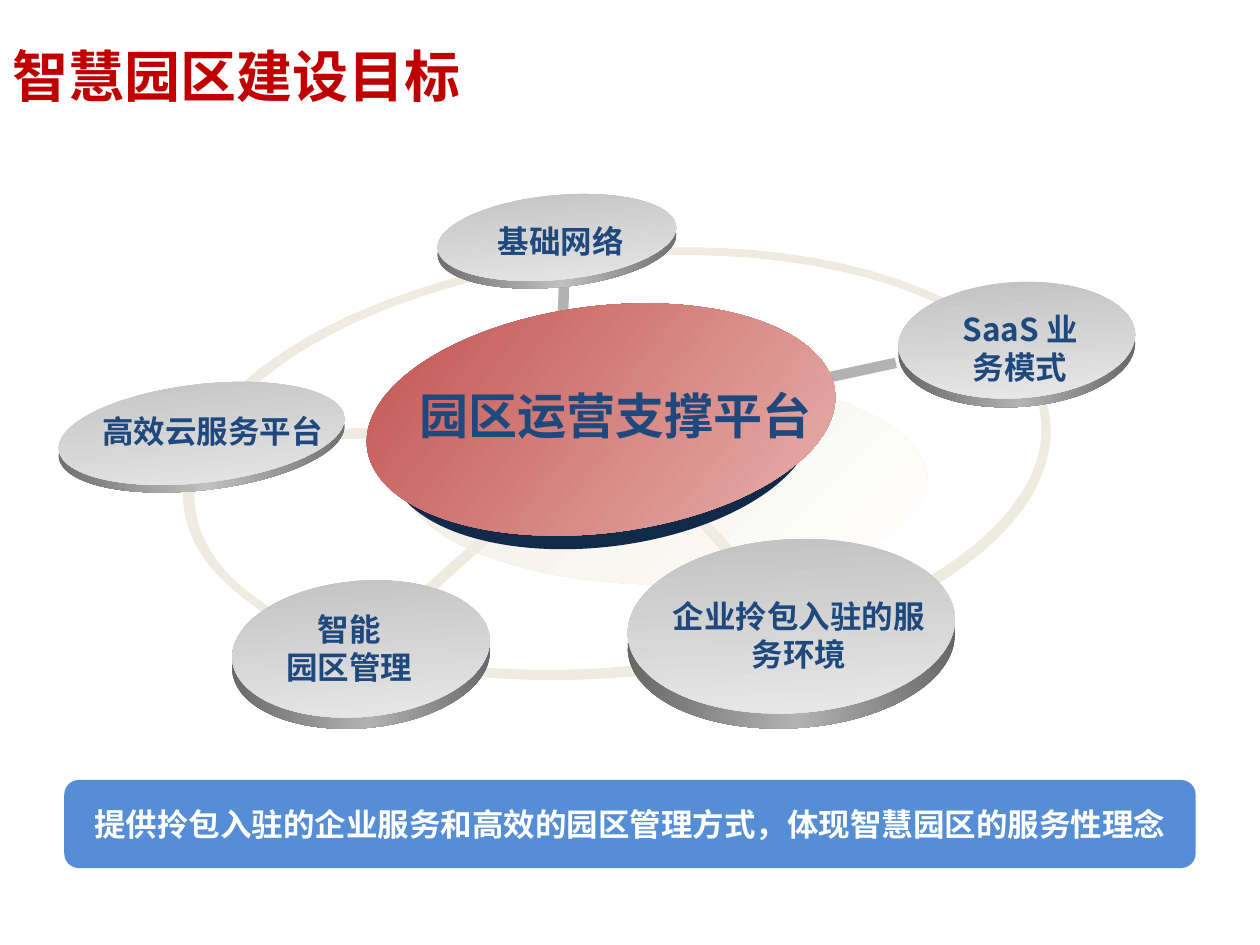
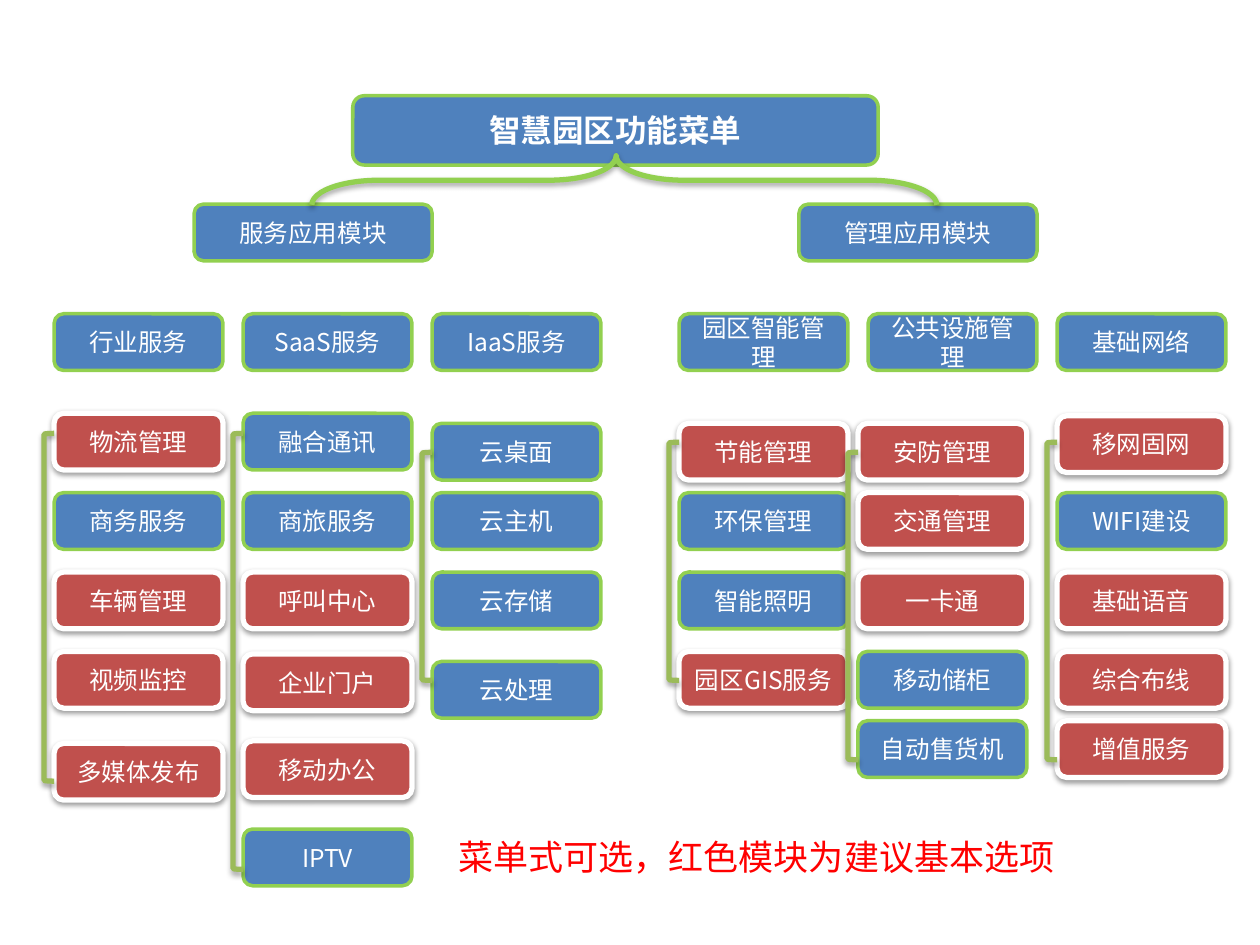
from lxml.etree import SubElement
from pptx import Presentation
from pptx.dml.color import RGBColor
from pptx.enum.shapes import MSO_CONNECTOR, MSO_SHAPE as Shape
from pptx.enum.text import MSO_ANCHOR as Anchor, PP_ALIGN as Align
from pptx.oxml.ns import qn
from pptx.util import Inches, Pt

FONT = "Noto Sans CJK SC"
WHITE = RGBColor(0xFF, 0xFF, 0xFF)
TITLE_RED = RGBColor(0xC0, 0x00, 0x00)
NOTE_RED = RGBColor(0xFF, 0x00, 0x00)
NAVY = RGBColor(0x1F, 0x49, 0x7D)
DEEP_NAVY = RGBColor(0x12, 0x2A, 0x4A)
BLUE = RGBColor(0x4F, 0x81, 0xBD)
BANNER_BLUE = RGBColor(0x55, 0x8E, 0xD5)
RED = RGBColor(0xC0, 0x50, 0x4D)
PALE_RED = RGBColor(0xE9, 0xB5, 0xB1)
LIME = RGBColor(0x92, 0xD0, 0x50)
OLIVE = RGBColor(0x9B, 0xBB, 0x59)
CREAM = RGBColor(0xEE, 0xEC, 0xE1)
PALE_GREY = RGBColor(0xEA, 0xEA, 0xEA)
SILVER = RGBColor(0xC0, 0xC0, 0xC0)
GREY = RGBColor(0xB2, 0xB2, 0xB2)
DARK_GREY = RGBColor(0x6B, 0x6B, 0x6B)
DARKER_GREY = RGBColor(0x63, 0x63, 0x63)


def add_figure(slide, kind, at, fill=None, line=None, rotation=0, angle=0, shadow=None):
    """Add a preset shape; fill is a colour or a list of gradient colours,
    line is (colour, points), shadow is (opacity %, distance in points)."""
    figure = slide.shapes.add_shape(kind, *map(Inches, at))
    figure.rotation = rotation
    figure.shadow.inherit = False
    properties = figure._element.spPr
    if isinstance(fill, list):
        figure.fill.gradient()
        gradient = properties.find(qn("a:gradFill"))
        gradient.find(qn("a:lin")).set("ang", str(angle * 60000))
        stops = gradient.find(qn("a:gsLst"))
        for old_stop in list(stops):
            stops.remove(old_stop)
        for i, color in enumerate(fill):
            stop = SubElement(stops, qn("a:gs"), pos=str(100000 * i // (len(fill) - 1)))
            SubElement(stop, qn("a:srgbClr"), val=str(color))
    elif fill is None:
        figure.fill.background()
    else:
        figure.fill.solid()
        figure.fill.fore_color.rgb = fill
    if line:
        figure.line.color.rgb, figure.line.width = line[0], Pt(line[1])
    else:
        figure.line.fill.background()
    if shadow:
        opacity, distance = shadow
        outer = SubElement(properties.find(qn("a:effectLst")), qn("a:outerShdw"),
                           blurRad=str(Pt(3.1)), dist=str(Pt(distance)),
                           dir="5400000", rotWithShape="0")
        black = SubElement(outer, qn("a:srgbClr"), val="000000")
        SubElement(black, qn("a:alpha"), val=str(opacity * 1000))
    return figure


def write(frame, text, size, color, bold=False, align=Align.CENTER,
          anchor=Anchor.MIDDLE, wrap=True, font=FONT):
    frame.text = text
    frame.word_wrap = wrap
    frame.vertical_anchor = anchor
    for paragraph in frame.paragraphs:
        paragraph.alignment = align
        paragraph.font.name = font
        paragraph.font.size = Pt(size)
        paragraph.font.bold = bold
        paragraph.font.color.rgb = color
        defaults = paragraph._p.pPr.find(qn("a:defRPr"))
        SubElement(defaults, qn("a:ea"), typeface=FONT)


prs = Presentation()
prs.slide_width, prs.slide_height = Inches(10), Inches(7.5)

# Slide 1: goals of the smart park
goals = prs.slides.add_slide(prs.slide_layouts[5])
title = goals.shapes.title
title.left, title.top, title.width, title.height = map(Inches, (0, -0.03, 9, 1.25))
write(title.text_frame, "智慧园区建设目标", 32, TITLE_RED, True, Align.LEFT)

spokes = [
    (4.48, 2.18, 4.43, 3.48, GREY),
    (7.11, 2.88, 4.83, 3.37, GREY),
    (6.3, 4.94, 4.87, 3.37, CREAM),
    (2.86, 5.16, 4.87, 3.37, CREAM),
    (1.69, 3.48, 4.87, 3.37, CREAM),
]
for i, (*ends, color) in enumerate(spokes):
    spoke = goals.shapes.add_connector(MSO_CONNECTOR.STRAIGHT, *map(Inches, ends))
    spoke.line.color.rgb = color
    spoke.line.width = Pt(6)
    SubElement(spoke._element.spPr, qn("a:effectLst"))
    if i == 0:
        add_figure(goals, Shape.OVAL, (3.2, 2.97, 4.16, 1.67), [CREAM, WHITE], angle=45)

add_figure(goals, Shape.OVAL, (3.07, 2.65, 3.4, 1.69), DEEP_NAVY, rotation=353)
add_figure(goals, Shape.OVAL, (2.9, 2.43, 3.74, 1.8), [RED, PALE_RED], rotation=353, angle=45)
add_figure(goals, Shape.OVAL, (1.5, 2.02, 6.82, 3.32), line=(CREAM, 4.5), rotation=354.3)
add_figure(goals, Shape.OVAL, (1.46, 2.02, 6.84, 3.29), line=(CREAM, 3), rotation=354.3)

# Disc place, rotation, rim depth, rim colours
discs = [
    ((0.46, 3.05, 2.28, 0.78), 353.4, 0.06, DARK_GREY, SILVER),
    ((3.47, 1.55, 1.9, 0.67), 354.6, 0.06, DARK_GREY, SILVER),
    ((7.13, 2.24, 1.88, 0.92), 356.5, 0.07, DARKER_GREY, GREY),
    ((4.98, 4.28, 2.6, 1.38), 356.7, 0.12, DARKER_GREY, GREY),
    ((1.84, 4.61, 2.05, 1.08), 355.1, 0.09, DARKER_GREY, GREY),
]
for (left, top, width, height), tilt, depth, edge, middle in discs:
    add_figure(goals, Shape.OVAL, (left, top + depth, width, height),
               [edge, middle, edge], rotation=tilt)
    add_figure(goals, Shape.OVAL, (left, top, width, height),
               [SILVER, PALE_GREY], rotation=tilt, angle=90)

labels = [
    ("园区运营支撑平台", (3.06, 3.01, 3.65, 0.57), 28, "Arial"),
    ("智能\n园区管理", (2.11, 4.79, 1.32, 0.71), 18, FONT),
    ("企业拎包入驻的服务环境", (5.24, 4.69, 2.2, 0.71), 18, FONT),
    ("SaaS 业务模式", (7.44, 2.41, 1.31, 0.71), 18, FONT),
    ("高效云服务平台", (0.7, 3.22, 1.97, 0.4), 18, FONT),
    ("基础网络", (3.5, 1.71, 1.9, 0.4), 18, FONT),
]
for text, at, size, font in labels:
    label = goals.shapes.add_textbox(*map(Inches, at))
    write(label.text_frame, text, size, NAVY, True, anchor=Anchor.TOP, font=font)

banner = add_figure(goals, Shape.ROUNDED_RECTANGLE, (0.51, 6.19, 8.98, 0.7), BANNER_BLUE)
write(banner.text_frame, "提供拎包入驻的企业服务和高效的园区管理方式，体现智慧园区的服务性理念",
      18, WHITE, True, wrap=False, font="Arial")

# Slide 2: function menu
menu = prs.slides.add_slide(prs.slide_layouts[6])
BOX_WIDTH, BOX_HEIGHT = 1.34, 0.45
HEADER_TOP = 2.49
BRACKET_WIDTH = 0.08
ROW_2, ROW_3, ROW_4 = 3.91, 4.54, 5.17
LINE_SHADOW, BOX_SHADOW = (35, 1.8), (38, 1.6)
BASIC_MODULES = {
    "物流管理", "车辆管理", "视频监控", "多媒体发布", "呼叫中心", "企业门户", "移动办公",
    "节能管理", "园区GIS服务", "安防管理", "交通管理", "一卡通",
    "移网固网", "基础语音", "综合布线", "增值服务",
}

headings = [
    ("智慧园区功能菜单", (2.8, 0.76, 4.17, 0.55), 18),
    ("服务应用模块", (1.54, 1.62, 1.89, BOX_HEIGHT), 14),
    ("管理应用模块", (6.34, 1.62, 1.89, BOX_HEIGHT), 14),
]
for text, at, size in headings:
    heading = add_figure(menu, Shape.ROUNDED_RECTANGLE, at, BLUE, (LIME, 2))
    write(heading.text_frame, text, size, WHITE, size == 18)

brace = add_figure(menu, Shape.RIGHT_BRACE, (4.76, -1.05, 0.39, 4.96),
                   line=(LIME, 3), rotation=270, shadow=LINE_SHADOW)
brace.adjustments[0], brace.adjustments[1] = 1.37, 0.487

# Header, header left, module left, bracket top and height, modules by top
columns = [
    ("行业服务", 0.43, 0.43, (3.44, 2.76),
     {3.28: "物流管理", ROW_2: "商务服务", ROW_3: "车辆管理", ROW_4: "视频监控",
      5.9: "多媒体发布"}),
    ("SaaS服务", 1.93, 1.93, (3.44, 3.46),
     {3.28: "融合通讯", ROW_2: "商旅服务", ROW_3: "呼叫中心", 5.19: "企业门户",
      5.88: "移动办公", 6.58: "IPTV"}),
    ("IaaS服务", 3.43, 3.43, (3.59, 1.81),
     {3.36: "云桌面", ROW_2: "云主机", ROW_3: "云存储", 5.25: "云处理"}),
    ("园区智能管理", 5.39, 5.39, (3.51, 1.89),
     {3.36: "节能管理", ROW_2: "环保管理", ROW_3: "智能照明", ROW_4: "园区GIS服务"}),
    ("公共设施管理", 6.89, 6.81, (3.59, 2.44),
     {3.36: "安防管理", ROW_2: "交通管理", ROW_3: "一卡通", ROW_4: "移动储柜",
      5.72: "自动售货机"}),
    ("基础网络", 8.39, 8.39, (3.51, 2.52),
     {3.3: "移网固网", ROW_2: "WIFI建设", ROW_3: "基础语音", ROW_4: "综合布线",
      5.72: "增值服务"}),
]
for header, header_left, left, (bracket_top, bracket_height), modules in columns:
    cells = [(header, header_left, HEADER_TOP)]
    cells += [(module, left, top) for top, module in modules.items()]
    for text, cell_left, top in cells:
        at = (cell_left, top, BOX_WIDTH, BOX_HEIGHT)
        if text in BASIC_MODULES:
            box = add_figure(menu, Shape.ROUNDED_RECTANGLE, at, RED, (WHITE, 3),
                             shadow=BOX_SHADOW)
        else:
            box = add_figure(menu, Shape.ROUNDED_RECTANGLE, at, BLUE, (LIME, 2))
        write(box.text_frame, text, 14, WHITE)
    add_figure(menu, Shape.LEFT_BRACKET,
               (left - BRACKET_WIDTH, bracket_top, BRACKET_WIDTH, bracket_height),
               line=(OLIVE, 3), shadow=LINE_SHADOW)

note = menu.shapes.add_textbox(*map(Inches, (3.54, 6.58, 6.46, 0.44)))
write(note.text_frame, "菜单式可选，红色模块为建议基本选项", 20, NOTE_RED,
      align=Align.LEFT, anchor=Anchor.TOP)

prs.save("out.pptx")
